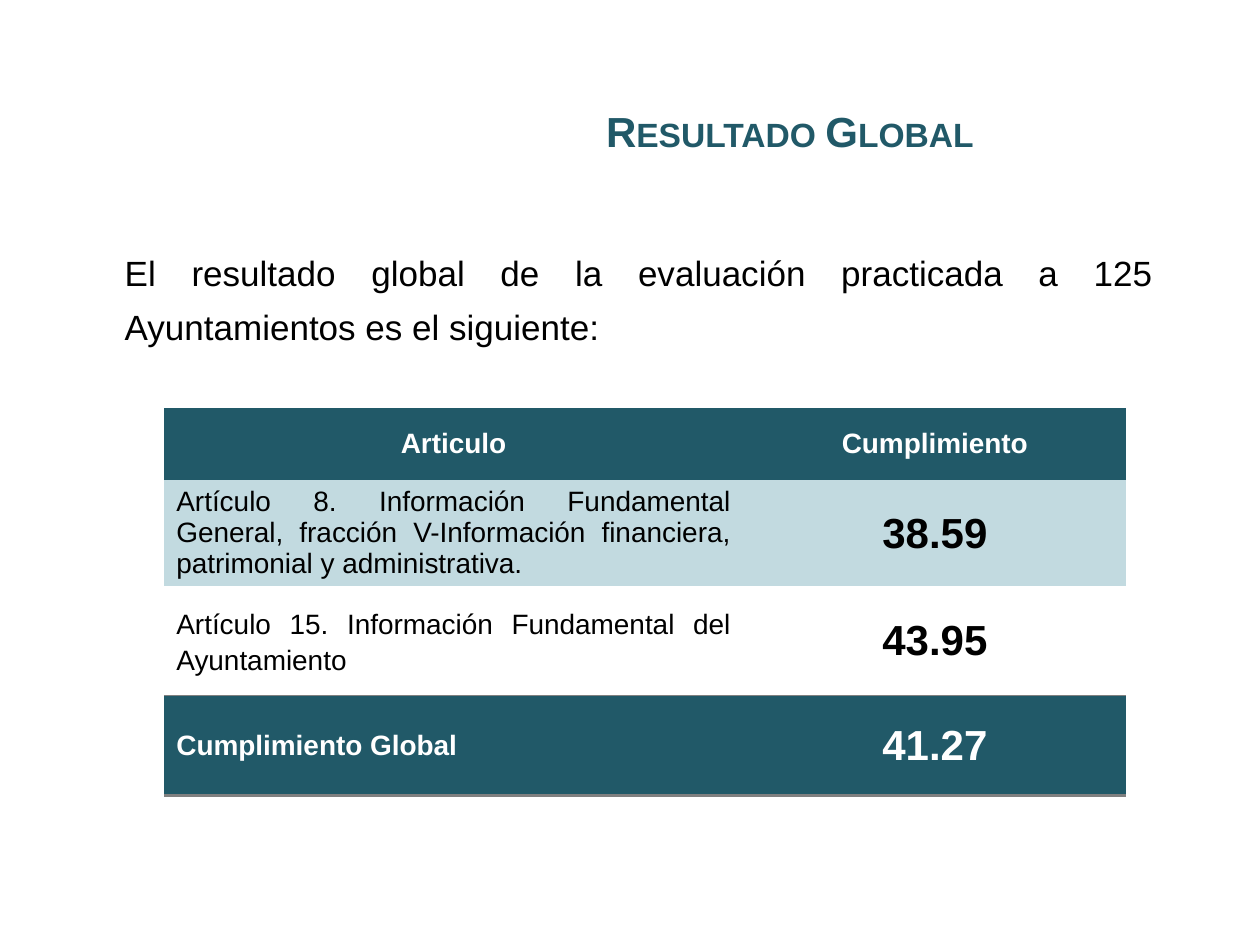
from lxml import etree
from pptx import Presentation
from pptx.dml.color import RGBColor
from pptx.enum.shapes import MSO_SHAPE
from pptx.enum.text import MSO_ANCHOR, PP_ALIGN
from pptx.oxml.ns import qn
from pptx.util import Inches, Pt

CENTER, JUSTIFY, LEFT = PP_ALIGN.CENTER, PP_ALIGN.JUSTIFY, PP_ALIGN.LEFT
MIDDLE, TOP = MSO_ANCHOR.MIDDLE, MSO_ANCHOR.TOP
RECTANGLE = MSO_SHAPE.RECTANGLE

TEAL, PALE, GRAY, WHITE, BLACK = "215968", "C2DAE0", "808080", "FFFFFF", "000000"
NO_STYLE = "{2D5ABB26-0587-4C30-8999-92F81FD0307C}"
TITLE_ONLY = 5

COLUMN_WIDTHS = (4.6, 3.04)
# Article, compliance, row height, fill, text colour, article alignment
ROWS = [
    ("Articulo", "Cumplimiento", 0.57, TEAL, WHITE, CENTER),
    ("Artículo 8. Información Fundamental General, fracción V-Información "
     "financiera, patrimonial y administrativa.", "38.59", 0.81, PALE, BLACK, JUSTIFY),
    ("Artículo 15. Información Fundamental del Ayuntamiento", "43.95",
     0.87, None, BLACK, JUSTIFY),
    ("Cumplimiento Global", "41.27", 0.79, TEAL, WHITE, LEFT),
]


def rgb(hex_color):
    return RGBColor.from_string(hex_color)


def write(frame, text, size, color, align, bold=False):
    paragraph = frame.paragraphs[0]
    paragraph.text = text
    paragraph.alignment = align
    font = paragraph.font
    font.name, font.size, font.bold = "Arial", Pt(size), bold
    font.color.rgb = rgb(color)
    return paragraph


def add_title(slide):
    title = slide.shapes.title
    title.left, title.top = Inches(2.58), Inches(0.29)
    title.width, title.height = Inches(7.38), Inches(1.5)
    title.text_frame.vertical_anchor = MIDDLE
    heading = write(title.text_frame, "Resultado Global", 24, TEAL, CENTER, True)
    heading.runs[0]._r.get_or_add_rPr().set("cap", "small")


def add_intro(slide):
    intro = slide.shapes.add_shape(
        RECTANGLE, Inches(0.51), Inches(1.78), Inches(8.74), Inches(0.98))
    intro.shadow.inherit = False
    intro.fill.solid()
    intro.fill.fore_color.rgb = rgb(WHITE)
    intro.line.fill.background()
    frame = intro.text_frame
    frame.word_wrap = True
    frame.vertical_anchor = TOP
    frame.margin_left, frame.margin_top = Inches(0.48), Inches(0.12)
    sentence = write(frame, "El resultado global de la evaluación practicada a 125 "
                     "Ayuntamientos es el siguiente:", 20, BLACK, JUSTIFY)
    sentence.line_spacing = 1.29


def add_border(cell, side, width):
    border = etree.SubElement(cell._tc.get_or_add_tcPr(), qn("a:" + side), w=str(Pt(width)))
    fill = etree.SubElement(border, qn("a:solidFill"))
    etree.SubElement(fill, qn("a:srgbClr"), val=GRAY)


def fill_cell(cell, color):
    cell.vertical_anchor = MIDDLE
    if color:
        cell.fill.solid()
        cell.fill.fore_color.rgb = rgb(color)
    else:
        cell.fill.background()


def add_results(slide):
    heights = [row[2] for row in ROWS]
    frame = slide.shapes.add_table(
        len(ROWS), len(COLUMN_WIDTHS), Inches(1.3), Inches(3.24),
        Inches(sum(COLUMN_WIDTHS)), Inches(sum(heights)))
    table = frame.table
    table._tbl.tblPr.find(qn("a:tableStyleId")).text = NO_STYLE
    for column, width in zip(table.columns, COLUMN_WIDTHS):
        column.width = Inches(width)

    # Rules above and below the total; borders come before the cell fills
    for column in range(len(COLUMN_WIDTHS)):
        add_border(table.cell(2, column), "lnB", 1)
        add_border(table.cell(3, column), "lnT", 1)
        add_border(table.cell(3, column), "lnB", 2)

    for index, (article, score, height, fill, color, align) in enumerate(ROWS):
        table.rows[index].height = Inches(height)
        article_cell, score_cell = table.cell(index, 0), table.cell(index, 1)
        is_heading, is_total = index == 0, index == len(ROWS) - 1
        label = write(article_cell.text_frame, article, 16, color, align,
                      is_heading or is_total)
        if fill is None:
            label.line_spacing = 1.15
        write(score_cell.text_frame, score, 16 if is_heading else 24, color, CENTER, True)
        if not is_heading:
            score_cell.margin_left = score_cell.margin_right = Inches(0.01)
            score_cell.margin_top, score_cell.margin_bottom = Inches(0.01), 0
        for cell in (article_cell, score_cell):
            fill_cell(cell, fill)


def main():
    deck = Presentation()
    deck.slide_width, deck.slide_height = Inches(10), Inches(7.5)
    slide = deck.slides.add_slide(deck.slide_layouts[TITLE_ONLY])
    add_title(slide)
    add_intro(slide)
    add_results(slide)
    deck.save("out.pptx")


if __name__ == "__main__":
    main()
